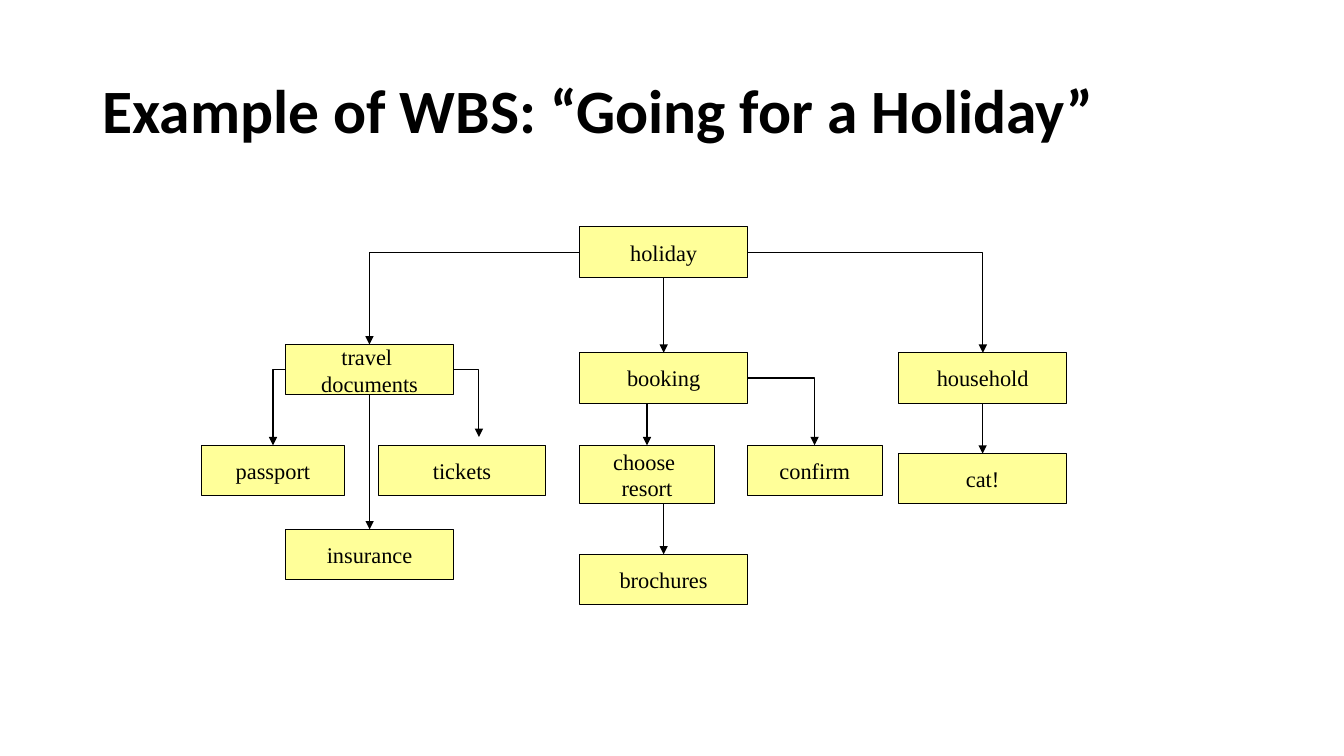
from dataclasses import dataclass

from lxml.etree import SubElement
from pptx import Presentation
from pptx.dml.color import RGBColor
from pptx.enum.shapes import MSO_CONNECTOR, MSO_SHAPE
from pptx.enum.text import MSO_ANCHOR, MSO_AUTO_SIZE, PP_ALIGN
from pptx.oxml.ns import qn
from pptx.shapes.autoshape import Shape
from pptx.shapes.connector import Connector
from pptx.slide import Slide
from pptx.util import Cm, Pt

BLACK = "000000"
YELLOW = "FFFF99"
BOTTOM, TOP = 2, 0


@dataclass(frozen=True)
class Task:
    text: str
    left: float
    top: float
    width: float = 4.23
    height: float = 1.27


@dataclass(frozen=True)
class Elbow:
    parent: str
    end_x: float
    end_y: float


TASKS = {
    "holiday": Task("holiday", 14.61, 5.72),
    "documents": Task("travel \ndocuments", 7.2, 8.68),
    "passport": Task("passport", 5.08, 11.22, width=3.6),
    "tickets": Task("tickets", 9.53, 11.22),
    "insurance": Task("insurance", 7.2, 13.34),
    "booking": Task("booking", 14.61, 8.89),
    "resort": Task("choose \nresort", 14.61, 11.22, width=3.39, height=1.48),
    "confirm": Task("confirm", 18.84, 11.22, width=3.39),
    "brochures": Task("brochures", 14.61, 13.97),
    "household": Task("household", 22.65, 8.89),
    "cat": Task("cat!", 22.65, 11.43),
}
ELBOWS = [
    Elbow("holiday", 24.77, 8.89),
    Elbow("holiday", 9.31, 8.68),
    Elbow("documents", 6.88, 11.22),
    Elbow("documents", 12.07, 11.01),
    Elbow("booking", 20.53, 11.22),
]
DROPS = [
    ("documents", "insurance"),
    ("holiday", "booking"),
    ("booking", "resort"),
    ("resort", "brochures"),
    ("household", "cat"),
]


def color(value: str) -> RGBColor:
    return RGBColor.from_string(value)


def draw_title(slide: Slide, text: str) -> None:
    title = slide.shapes.title
    title.left, title.top, title.width, title.height = Cm(2.33), Cm(1.01), Cm(29.21), Cm(3.68)
    text_frame = title.text_frame
    text_frame.text = text
    text_frame.auto_size = MSO_AUTO_SIZE.NONE
    text_frame.vertical_anchor = MSO_ANCHOR.MIDDLE
    paragraph = text_frame.paragraphs[0]
    paragraph.alignment = PP_ALIGN.LEFT
    paragraph.line_spacing = 0.9
    font = paragraph.runs[0].font
    font.name, font.size, font.bold = "Calibri", Pt(44), True
    font.color.rgb = color(BLACK)


def draw_task(slide: Slide, task: Task) -> Shape:
    shape = slide.shapes.add_shape(
        MSO_SHAPE.RECTANGLE, Cm(task.left), Cm(task.top), Cm(task.width), Cm(task.height)
    )
    shape.shadow.inherit = False
    shape.fill.solid()
    shape.fill.fore_color.rgb = color(YELLOW)
    shape.line.color.rgb = color(BLACK)
    shape.line.width = Pt(0.75)
    text_frame = shape.text_frame
    text_frame.text = task.text
    text_frame.word_wrap = False
    text_frame.vertical_anchor = MSO_ANCHOR.MIDDLE
    for paragraph in text_frame.paragraphs:
        paragraph.alignment = PP_ALIGN.CENTER
        font = paragraph.runs[0].font
        font.name, font.size = "Times New Roman", Pt(16)
        font.color.rgb = color(BLACK)
    return shape


def style_arrow(connector: Connector) -> None:
    connector.line.color.rgb = color(BLACK)
    connector.line.width = Pt(0.75)
    properties = connector._element.spPr
    SubElement(properties.find(qn("a:ln")), qn("a:tailEnd"), type="triangle")
    SubElement(properties, qn("a:effectLst"))


def draw_elbow(slide: Slide, elbow: Elbow) -> None:
    parent = TASKS[elbow.parent]
    leftward = elbow.end_x < parent.left
    start_x = parent.left if leftward else parent.left + parent.width
    connector = slide.shapes.add_connector(
        MSO_CONNECTOR.ELBOW,
        Cm(start_x),
        Cm(parent.top + parent.height / 2),
        Cm(elbow.end_x),
        Cm(elbow.end_y),
    )
    properties = connector._element.spPr
    geometry = properties.find(qn("a:prstGeom"))
    geometry.set("prst", "bentConnector2")
    if leftward:
        transform = properties.find(qn("a:xfrm"))
        transform.attrib.pop("flipH")
        transform.set("rot", "10800000")
        transform.set("flipV", "1")
    style_arrow(connector)


def draw_drop(slide: Slide, shapes: dict[str, Shape], parent: str, child: str) -> None:
    upper, lower = TASKS[parent], TASKS[child]
    center = lower.left + lower.width / 2
    connector = slide.shapes.add_connector(
        MSO_CONNECTOR.STRAIGHT,
        Cm(center),
        Cm(upper.top + upper.height),
        Cm(center),
        Cm(lower.top),
    )
    if abs(upper.left + upper.width / 2 - center) < 0.1:
        connector.begin_connect(shapes[parent], BOTTOM)
    connector.end_connect(shapes[child], TOP)
    style_arrow(connector)


def main() -> None:
    presentation = Presentation()
    presentation.slide_width, presentation.slide_height = Cm(33.87), Cm(19.05)
    slide = presentation.slides.add_slide(presentation.slide_layouts.get_by_name("Title Only"))
    draw_title(slide, "Example of WBS: “Going for a Holiday”")
    shapes = {name: draw_task(slide, task) for name, task in TASKS.items()}
    for elbow in ELBOWS:
        draw_elbow(slide, elbow)
    for parent, child in DROPS:
        draw_drop(slide, shapes, parent, child)
    presentation.save("out.pptx")


if __name__ == "__main__":
    main()
